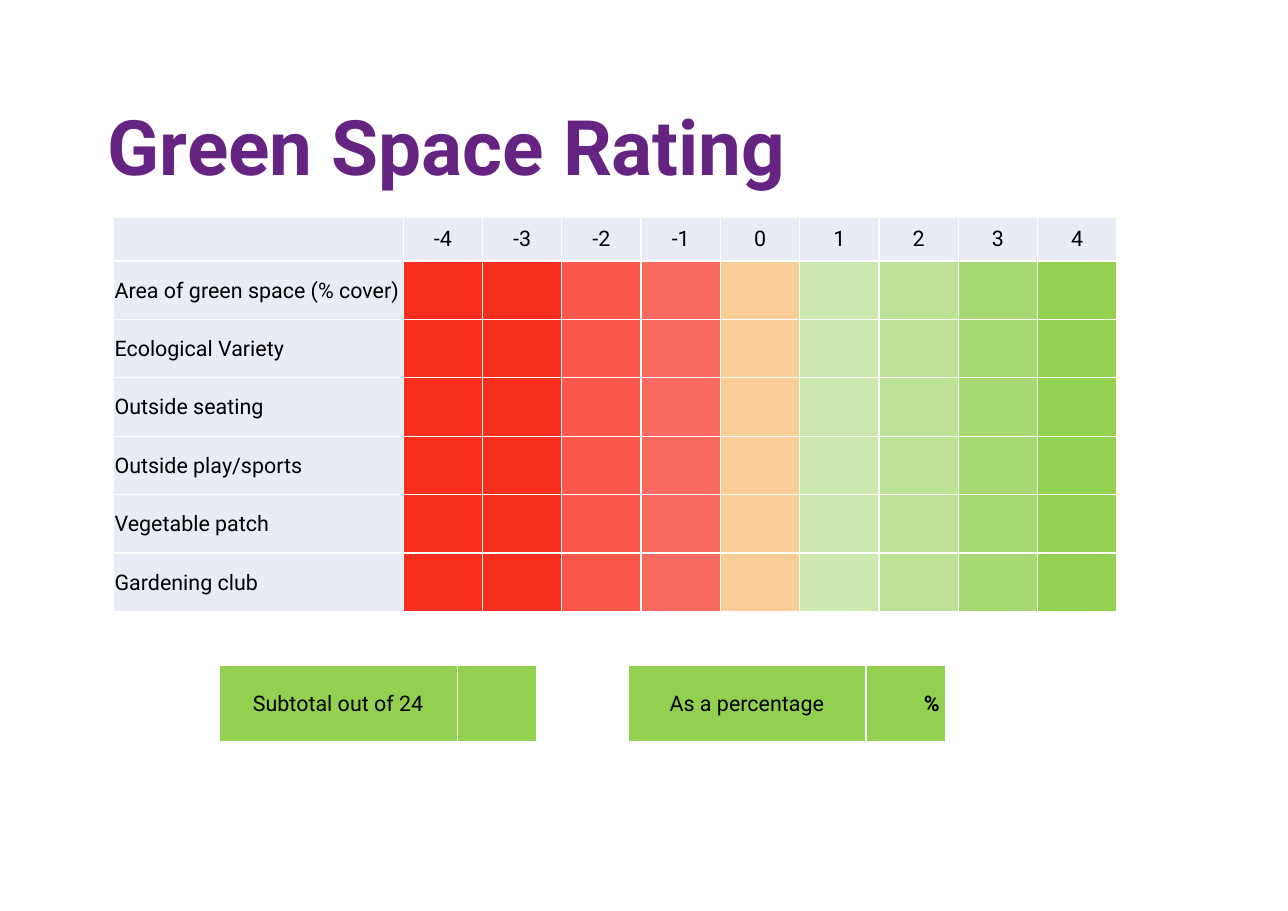
from lxml.etree import SubElement
from pptx import Presentation
from pptx.dml.color import RGBColor
from pptx.enum.text import MSO_ANCHOR, PP_ALIGN
from pptx.oxml.ns import qn
from pptx.util import Inches, Pt

COLORS = {
    "purple": "662482",
    "black": "000000",
    "white": "FFFFFF",
    "lavender": "E9EBF5",
    "red": "F72D1D",
    "orange": "F29E2E",
    "green": "92D050",
}
CRITERIA = [
    "Area of green space (% cover)",
    "Ecological Variety",
    "Outside seating",
    "Outside play/sports",
    "Vegetable patch",
    "Gardening club",
]
RATINGS = [
    ("-4", "red", 100),
    ("-3", "red", 100),
    ("-2", "red", 80),
    ("-1", "red", 70),
    ("0", "orange", 50),
    ("1", "green", 45),
    ("2", "green", 60),
    ("3", "green", 80),
    ("4", "green", 100),
]
SCORE_WIDTH = 0.72


class RatingPage:
    font_name = "Roboto"
    text_size = 14

    def __init__(self, deck):
        self.page = deck.slides.add_slide(deck.slide_layouts[6])

    def style(self, paragraph, size, color, bold=False):
        font = paragraph.font
        font.name = self.font_name
        font.size = Pt(size)
        font.bold = bold
        font.color.rgb = RGBColor.from_string(COLORS[color])

    def title(self, text, left, top, width, height):
        box = self.page.shapes.add_textbox(
            Inches(left), Inches(top), Inches(width), Inches(height))
        frame = box.text_frame
        frame.word_wrap = True
        frame.vertical_anchor = MSO_ANCHOR.BOTTOM
        paragraph = frame.paragraphs[0]
        paragraph.text = text
        paragraph.line_spacing = 0.9
        self.style(paragraph, 50, "purple", True)

    def table(self, left, top, widths, heights):
        frame = self.page.shapes.add_table(
            len(heights), len(widths), Inches(left), Inches(top),
            Inches(sum(widths)), Inches(sum(heights)))
        table = frame.table
        table.first_row = False
        table.horz_banding = False
        for column, width in zip(table.columns, widths):
            column.width = Inches(width)
        for row, height in zip(table.rows, heights):
            row.height = Inches(height)
        return table

    def cell(self, cell, color, text="", align=PP_ALIGN.CENTER,
             opacity=100, bold=False, right=0.01):
        cell.vertical_anchor = MSO_ANCHOR.MIDDLE
        cell.margin_left = cell.margin_top = Inches(0.01)
        cell.margin_right = Inches(right)
        cell.margin_bottom = 0
        properties = cell._tc.get_or_add_tcPr()
        for side in ("a:lnL", "a:lnR", "a:lnT", "a:lnB"):
            line = SubElement(properties, qn(side), w=str(Pt(1)))
            fill = SubElement(line, qn("a:solidFill"))
            SubElement(fill, qn("a:srgbClr"), val=COLORS["white"])
        cell.fill.solid()
        cell.fill.fore_color.rgb = RGBColor.from_string(COLORS[color])
        if opacity < 100:
            shade = properties.find(qn("a:solidFill")).find(qn("a:srgbClr"))
            SubElement(shade, qn("a:alpha"), val=str(opacity * 1000))
        paragraph = cell.text_frame.paragraphs[0]
        if text:
            paragraph.text = text
        paragraph.alignment = align
        self.style(paragraph, self.text_size, "black", bold)

    def rating_grid(self, left, top):
        widths = [2.63] + [SCORE_WIDTH] * len(RATINGS)
        heights = [0.4] + [0.53] * len(CRITERIA)
        table = self.table(left, top, widths, heights)
        self.cell(table.cell(0, 0), "lavender")
        for row, name in enumerate(CRITERIA, 1):
            self.cell(table.cell(row, 0), "lavender", name, PP_ALIGN.LEFT)
        for column, (score, color, opacity) in enumerate(RATINGS, 1):
            self.cell(table.cell(0, column), "lavender", score)
            for row in range(1, len(heights)):
                self.cell(table.cell(row, column), color, opacity=opacity)

    def result(self, left, top, label, unit=""):
        table = self.table(left, top, [SCORE_WIDTH] * 4, [0.69])
        table.cell(0, 0).merge(table.cell(0, 2))
        self.cell(table.cell(0, 0), "green", label)
        self.cell(table.cell(0, 3), "green", unit, PP_ALIGN.RIGHT,
                  bold=True, right=0.05)


def main():
    deck = Presentation()
    deck.slide_width = Inches(11.69)
    deck.slide_height = Inches(8.27)
    page = RatingPage(deck)
    page.rating_grid(1.03, 1.97)
    page.title("Green Space Rating", 0.88, 0.87, 9.94, 0.92)
    page.result(1.99, 6.04, "Subtotal out of 24")
    page.result(5.7, 6.04, "As a percentage", "%")
    deck.save("out.pptx")


if __name__ == "__main__":
    main()
